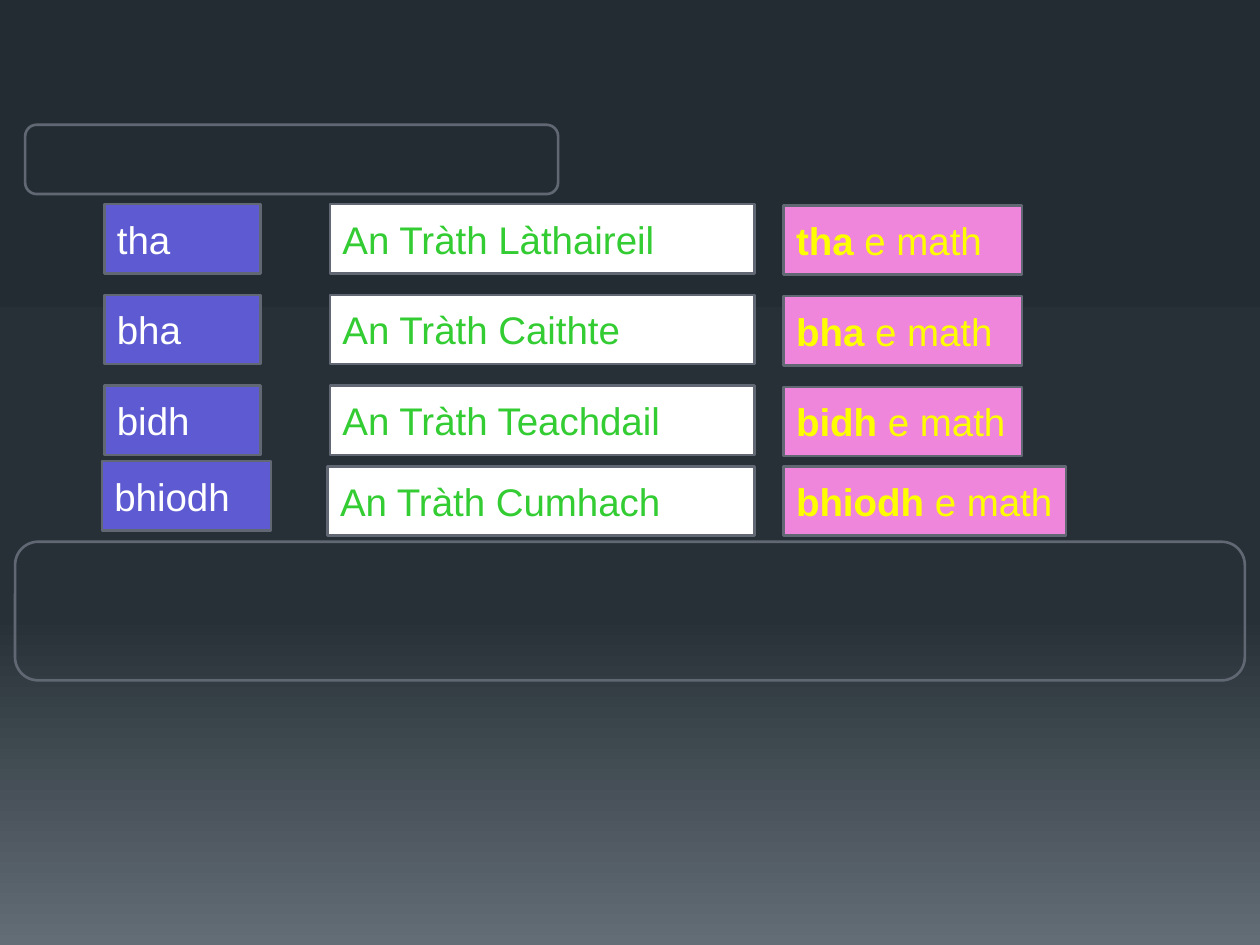
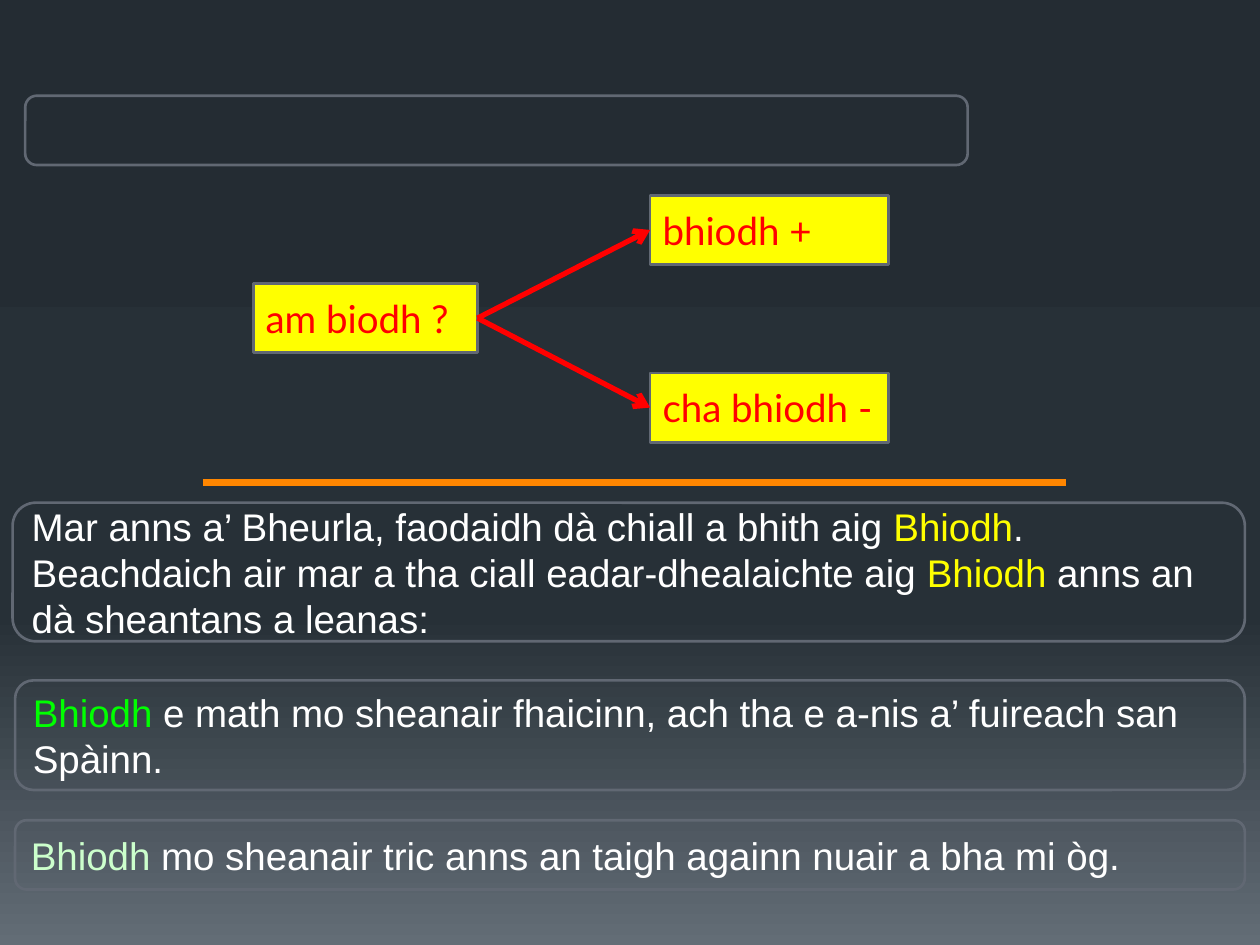
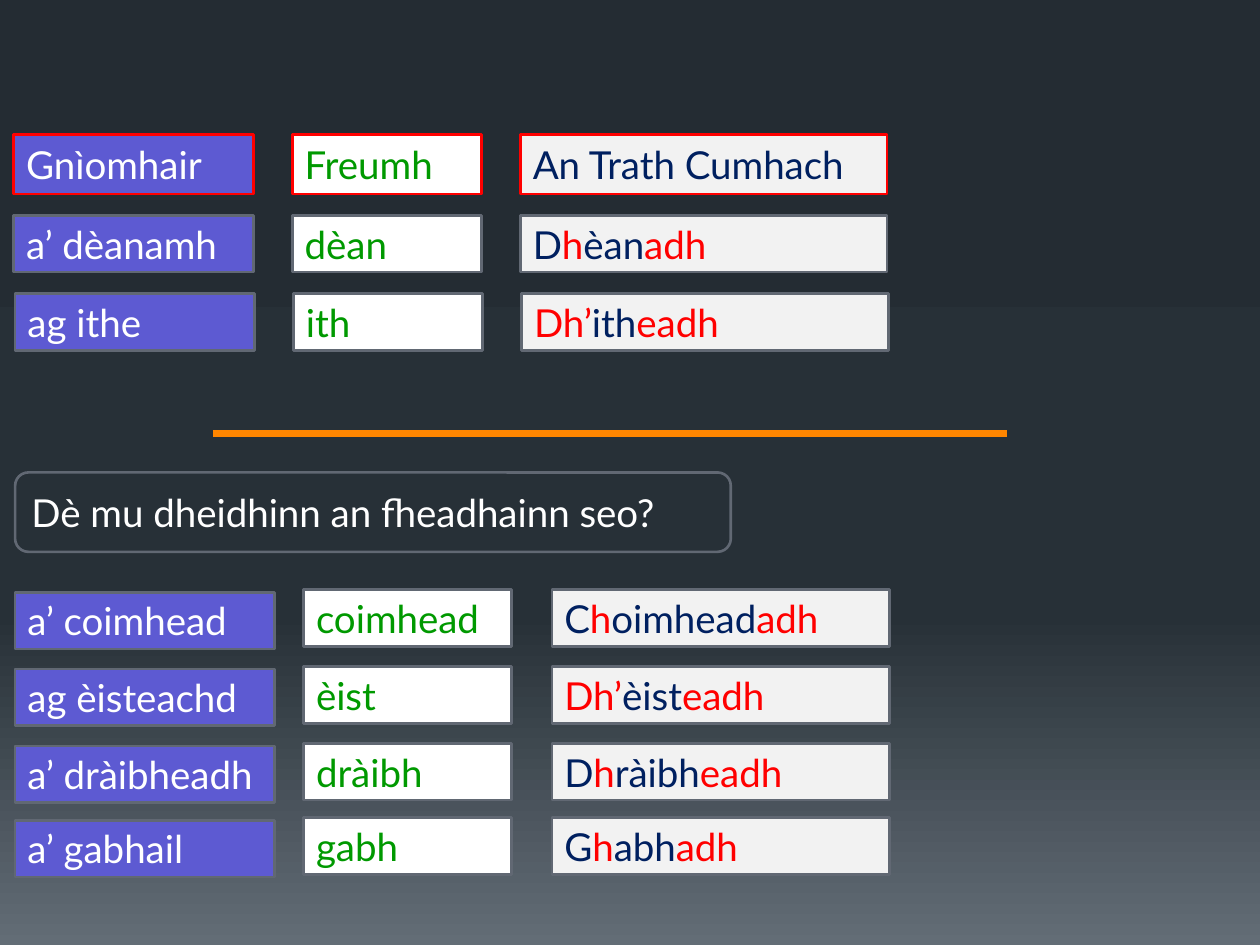
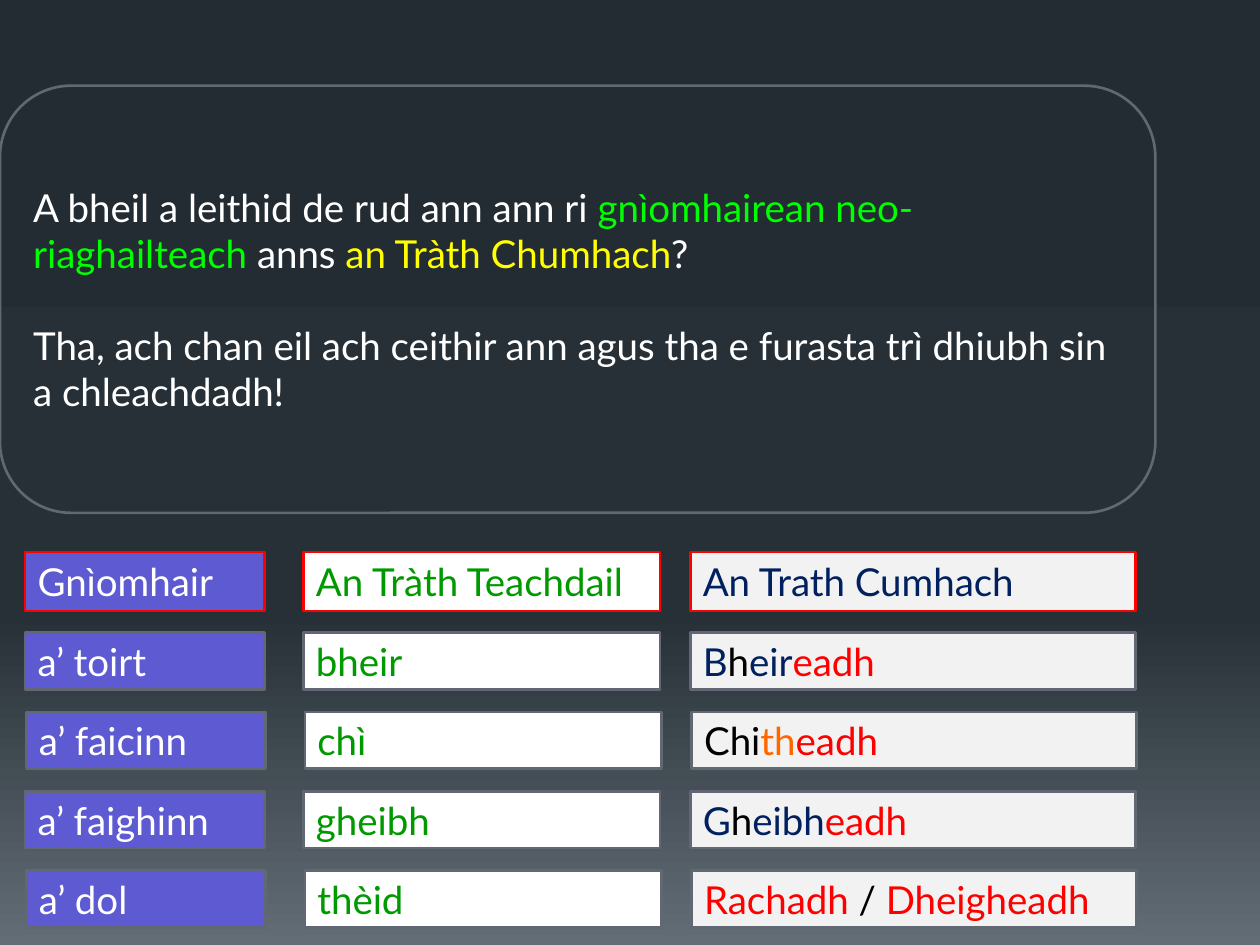
"""Build four slides on the Gaelic conditional tense."""
import copy

import pptx
import pptx.dml.color
import pptx.enum.shapes
import pptx.enum.text
import pptx.oxml
import pptx.oxml.ns
import pptx.util

PX = 9144
SHAPE = pptx.enum.shapes.MSO_SHAPE
COLORS = {
    "top": "242C33", "middle": "273037", "bottom": "636D76",
    "outline": "616873", "violet": "5D5AD2", "pink": "EF86DB", "pale": "F2F2F2",
    "white": "FFFFFF", "black": "000000", "yellow": "FFFF00", "red": "FF0000",
    "navy": "002060", "orange": "FF8600", "amber": "FF6600",
    "green": "33CC33", "leaf": "009900", "lime": "00FF00", "mint": "CCFFCC",
}
COLUMN_STYLES = [("violet", "white"), ("white", "leaf"), ("pale", "navy")]


def rgb(name):
    """Return the named colour."""
    return pptx.dml.color.RGBColor.from_string(COLORS[name])


def set_background(master):
    """Give the master the shared three-stop vertical gradient."""
    fill = master.background.fill
    fill.gradient()
    fill.gradient_angle = 270
    stops = master.element.find(".//" + pptx.oxml.ns.qn("a:gsLst"))
    stops.append(copy.deepcopy(stops[-1]))
    for stop, position, color in zip(fill.gradient_stops, (0, 0.65, 1),
                                     ("top", "middle", "bottom")):
        stop.position = position
        stop.color.rgb = rgb(color)


def add_box(s, kind, box, paragraphs=(), fill=None, line="outline", font="Lato", gap=0):
    """Add a shape whose paragraphs are lists of (text, colour[, bold]) runs."""
    sp = s.shapes.add_shape(kind, *(n * PX for n in box))
    sp.shadow.inherit = False
    if fill:
        sp.fill.solid()
        sp.fill.fore_color.rgb = rgb(fill)
    else:
        sp.fill.background()
    sp.line.color.rgb = rgb(line)
    sp.line.width = pptx.util.Pt(1.5)
    tf = sp.text_frame
    tf.word_wrap = True
    tf.vertical_anchor = pptx.enum.text.MSO_ANCHOR.MIDDLE
    for i, runs in enumerate(paragraphs):
        p = tf.add_paragraph() if i else tf.paragraphs[0]
        p.alignment = pptx.enum.text.PP_ALIGN.LEFT
        p.font.size = pptx.util.Pt(22)
        p.font.name = font
        if i and gap:
            p.space_before = pptx.util.Pt(gap)
        for text, color, *bold in runs:
            r = p.add_run()
            r.text = text
            r.font.color.rgb = rgb(color)
            if bold:
                r.font.bold = bold[0]
    return sp


def add_panel(s, box, *paragraphs, **options):
    """Add an outlined rounded panel."""
    return add_box(s, SHAPE.ROUNDED_RECTANGLE, box, paragraphs, **options)


def add_cell(s, box, runs, fill, **options):
    """Add a filled one-paragraph box."""
    return add_box(s, SHAPE.FLOWCHART_PROCESS, box, [runs], fill, **options)


def add_line(s, start, end, color, width):
    """Add a straight line without a shadow."""
    cx = s.shapes.add_connector(pptx.enum.shapes.MSO_CONNECTOR.STRAIGHT,
                                *(n * PX for n in start + end))
    cx.line.color.rgb = rgb(color)
    cx.line.width = pptx.util.Pt(width)
    pptx.oxml.ns.qn("a:effectLst")
    cx._element.spPr.append(cx._element.makeelement(pptx.oxml.ns.qn("a:effectLst"), {}))
    return cx


def add_arrow(s, source, target):
    """Join the right side of source to the left side of target with an arrow."""
    cx = add_line(s, (0, 0), (0, 0), "red", 3)
    cx.begin_connect(source, 3)
    cx.end_connect(target, 1)
    ln = cx.line._get_or_add_ln()
    ln.append(ln.makeelement(pptx.oxml.ns.qn("a:tailEnd"), {"type": "arrow"}))


def add_verb_row(s, columns, top, cells, height=45, line="outline", drop=0):
    """Add verb, root and tense cells; drop lowers the verb cell."""
    for i, ((left, width), (fill, color), cell) in enumerate(
            zip(columns, COLUMN_STYLES, cells)):
        runs = [(cell, color)] if isinstance(cell, str) else cell
        add_cell(s, (left, top + (0 if i else drop), width, height), runs, fill, line=line)


def add_header_row(s, columns, top, cells):
    """Add a red-outlined heading row."""
    add_verb_row(s, columns, top, cells, height=47, line="red")


def build_tenses(s):
    """Show the tenses of the verb to be."""
    add_panel(s, (20, 99, 423, 55))
    add_panel(s, (12, 430, 976, 110))
    regular = ((83, 124), (262, 337), (622, 189))
    wide = ((81, 134), (260, 339), (622, 224))
    rows = [
        ("tha", "Làthaireil", regular, (162, 162, 163)),
        ("bha", "Caithte", regular, (234, 234, 235)),
        ("bidh", "Teachdail", regular, (306, 306, 307)),
        ("bhiodh", "Cumhach", wide, (366, 370, 370)),
    ]
    for verb, tense, columns, tops in rows:
        cells = [
            ([(verb, "white")], "violet"),
            ([("An Tràth " + tense, "green")], "white"),
            ([(verb, "yellow", True), (" e math", "yellow", False)], "pink"),
        ]
        for (left, width), top, (runs, fill) in zip(columns, tops, cells):
            add_cell(s, (left, top, width, 55), runs, fill, font="Arial")


def build_answers(s):
    """Show question and answers, then two meanings of Bhiodh."""
    yes, question, no = (
        add_cell(s, (left, top, width, 55), [(text, "red")], "yellow")
        for left, top, width, text in [(516, 155, 189, "bhiodh +"),
                                       (201, 225, 178, "am biodh ?"),
                                       (516, 296, 189, "cha bhiodh -")])
    for answer in (yes, no):
        add_arrow(s, question, answer)
    add_panel(s, (20, 76, 748, 55))
    add_panel(s, (10, 399, 978, 110),
              [("Mar anns a’ Bheurla, faodaidh dà chiall a bhith aig ", "white"),
               ("Bhiodh", "yellow"), (".", "white")],
              [("Beachdaich air mar a tha ciall eadar-dhealaichte aig ", "white"),
               ("Bhiodh ", "yellow"), ("anns an dà sheantans a leanas:", "white")],
              font="Arial")
    add_line(s, (161, 383), (846, 383), "orange", 3.75)
    add_panel(s, (12, 540, 976, 87),
              [("Bhiodh", "lime"),
               (" e math mo sheanair fhaicinn, ach tha e a-nis a’ fuireach san Spàinn.",
                "white")], font="Arial")
    add_panel(s, (12, 651, 976, 55),
              [("Bhiodh ", "mint"),
               ("mo sheanair tric anns an taigh againn nuair a bha mi òg.", "white")],
              font="Arial")


def lenited(initial, stem, ending, h_color="red"):
    """Return runs for a form with h after its initial and a red ending."""
    return [(initial, "navy"), ("h", h_color), (stem, "navy"), (ending, "red")]


def prefixed(stem):
    """Return runs for a vowel form with Dh’ and a red ending."""
    return [("Dh’", "red"), (stem, "navy"), ("eadh", "red")]


def build_regular_verbs(s):
    """Show how regular verbs form the conditional."""
    columns = ((11, 190), (232, 150), (413, 291))
    add_header_row(s, columns, 107, ("Gnìomhair", "Freumh", "An Trath Cumhach"))
    add_verb_row(s, columns, 171, ("a’ dèanamh", "dèan", lenited("D", "èan", "adh")))
    shifted = [(left + 1, width) for left, width in columns]
    add_verb_row(s, shifted, 233, ("ag ithe", "ith", prefixed("ith")))
    add_line(s, (169, 344), (799, 344), "orange", 3.75)
    add_panel(s, (12, 375, 568, 63), [("Dè mu dheidhinn an fheadhainn seo?", "white")])
    columns = ((12, 206), (241, 165), (438, 268))
    rows = [
        (468, "a’ coimhead", "coimhead", lenited("C", "oimhead", "adh")),
        (529, "ag èisteachd", "èist", prefixed("èist")),
        (590, "a’ dràibheadh", "dràibh", lenited("D", "ràibh", "eadh")),
        (649, "a’ gabhail", "gabh", lenited("G", "abh", "adh")),
    ]
    for top, *cells in rows:
        add_verb_row(s, columns, top, cells, drop=2)


def build_irregular_verbs(s):
    """Show the four irregular conditional verbs."""
    add_panel(s, (0, 68, 917, 339),
              [("A bheil a leithid de rud ann ann ri ", "white"),
               ("gnìomhairean neo-riaghailteach ", "lime"), ("anns ", "white"),
               ("an Tràth Chumhach", "yellow"), ("?", "white")],
              [("Tha, ach chan eil ach ceithir ann agus tha e furasta trì dhiubh sin "
                "a chleachdadh!", "white")], gap=26)
    columns = ((20, 190), (241, 283), (548, 353))
    add_header_row(s, columns, 438, ("Gnìomhair", "An Tràth Teachdail", "An Trath Cumhach"))
    rows = [
        ("a’ toirt", "bheir", lenited("B", "eir", "eadh", "black")),
        ("a’ faicinn", "chì", [("Chi", "black"), ("th", "amber"), ("eadh", "red")]),
        ("a’ faighinn", "gheibh", lenited("G", "eibh", "eadh", "black")),
        ("a’ dol", "thèid", [("Rachadh ", "red"), ("/ ", "black"), ("Dheigheadh", "red")]),
    ]
    for i, cells in enumerate(rows):
        shifted = [(left + i % 2, width) for left, width in columns]
        add_verb_row(s, shifted, 502 + 63 * i, cells)


def main():
    """Build and save the presentation."""
    prs = pptx.Presentation()
    prs.slide_width, prs.slide_height = 1000 * PX, 750 * PX
    set_background(prs.slide_master)
    for build in (build_tenses, build_answers, build_regular_verbs, build_irregular_verbs):
        build(prs.slides.add_slide(prs.slide_layouts[6]))
    prs.save("out.pptx")


if __name__ == "__main__":
    main()
